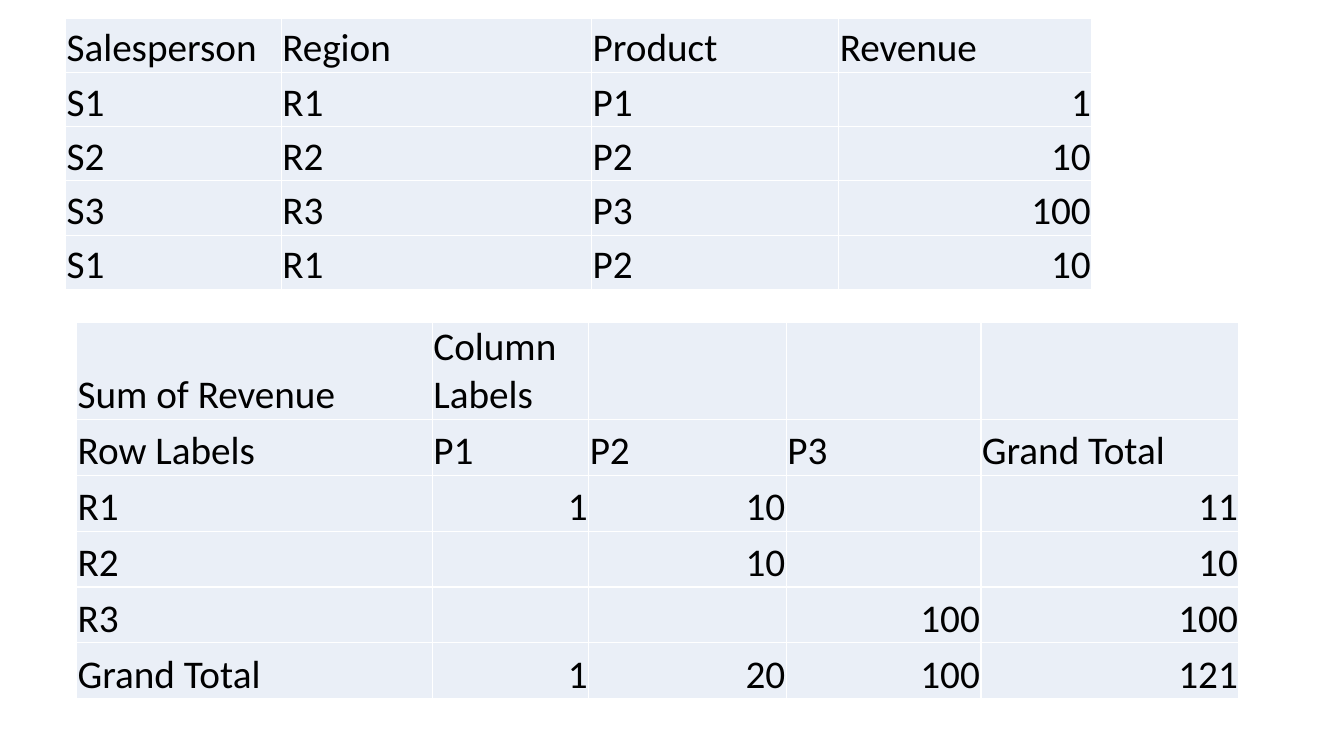
from lxml.etree import SubElement
from pptx import Presentation
from pptx.dml.color import RGBColor
from pptx.enum.text import MSO_ANCHOR, PP_ALIGN
from pptx.oxml.ns import qn
from pptx.util import Inches, Pt

BLACK = RGBColor(0x00, 0x00, 0x00)
WHITE = RGBColor(0xFF, 0xFF, 0xFF)
PALE_BLUE = RGBColor(0xEA, 0xEF, 0xF7)

SALES = [
    ["Salesperson", "Region", "Product", "Revenue"],
    ["S1", "R1", "P1", 1],
    ["S2", "R2", "P2", 10],
    ["S3", "R3", "P3", 100],
    ["S1", "R1", "P2", 10],
]
PIVOT = [
    ["Sum of Revenue", "Column Labels", None, None, None],
    ["Row Labels", "P1", "P2", "P3", "Grand Total"],
    ["R1", 1, 10, None, 11],
    ["R2", None, 10, None, 10],
    ["R3", None, None, 100, 100],
    ["Grand Total", 1, 20, 100, 121],
]


class TableSlide:
    """One blank slide; lengths are percentages of its width and height."""

    font_name = "Calibri"
    font_size = Pt(28)
    margin = Inches(0.01)
    border_width = Pt(1)

    def __init__(self, deck):
        self.deck = deck
        self.slide = deck.slides.add_slide(deck.slide_layouts[6])

    def across(self, percent):
        return round(self.deck.slide_width * percent / 100)

    def down(self, percent):
        return round(self.deck.slide_height * percent / 100)

    def add_table(self, left, top, widths, heights, values):
        frame = self.slide.shapes.add_table(
            len(heights), len(widths), self.across(left), self.down(top),
            self.across(sum(widths)), self.down(sum(heights)))
        table = frame.table
        table.first_row = False
        table.horz_banding = False
        for column, width in zip(table.columns, widths):
            column.width = self.across(width)
        for row, height, row_values in zip(table.rows, heights, values):
            row.height = self.down(height)
            for cell, value in zip(row.cells, row_values):
                self.style_cell(cell)
                if value is not None:
                    self.write_cell(cell, value)

    def style_cell(self, cell):
        properties = cell._tc.get_or_add_tcPr()
        for side in ("a:lnL", "a:lnR", "a:lnT", "a:lnB"):
            line = SubElement(properties, qn(side), w=str(self.border_width))
            line_fill = SubElement(line, qn("a:solidFill"))
            SubElement(line_fill, qn("a:srgbClr"), val=str(WHITE))
        cell.fill.solid()
        cell.fill.fore_color.rgb = PALE_BLUE
        cell.vertical_anchor = MSO_ANCHOR.BOTTOM
        cell.margin_left = cell.margin_right = cell.margin_top = self.margin
        cell.margin_bottom = 0

    def write_cell(self, cell, value):
        """Write a value; numbers align right."""
        para = cell.text_frame.paragraphs[0]
        para.text = str(value)
        if isinstance(value, int):
            para.alignment = PP_ALIGN.RIGHT
        for span in para.runs:
            span.font.name = self.font_name
            span.font.size = self.font_size
            span.font.color.rgb = BLACK


def main():
    deck = Presentation()
    deck.slide_width = Inches(13.33)
    deck.slide_height = Inches(7.5)
    page = TableSlide(deck)
    page.add_table(4.88, 2.4, [16.05, 23.1, 18.38, 18.83],
                   [7.18] * len(SALES), SALES)
    page.add_table(5.7, 42.67, [26.48, 11.63, 14.7, 14.48, 19.2],
                   [12.8] + [7.39] * (len(PIVOT) - 1), PIVOT)
    deck.save("out.pptx")


if __name__ == "__main__":
    main()
